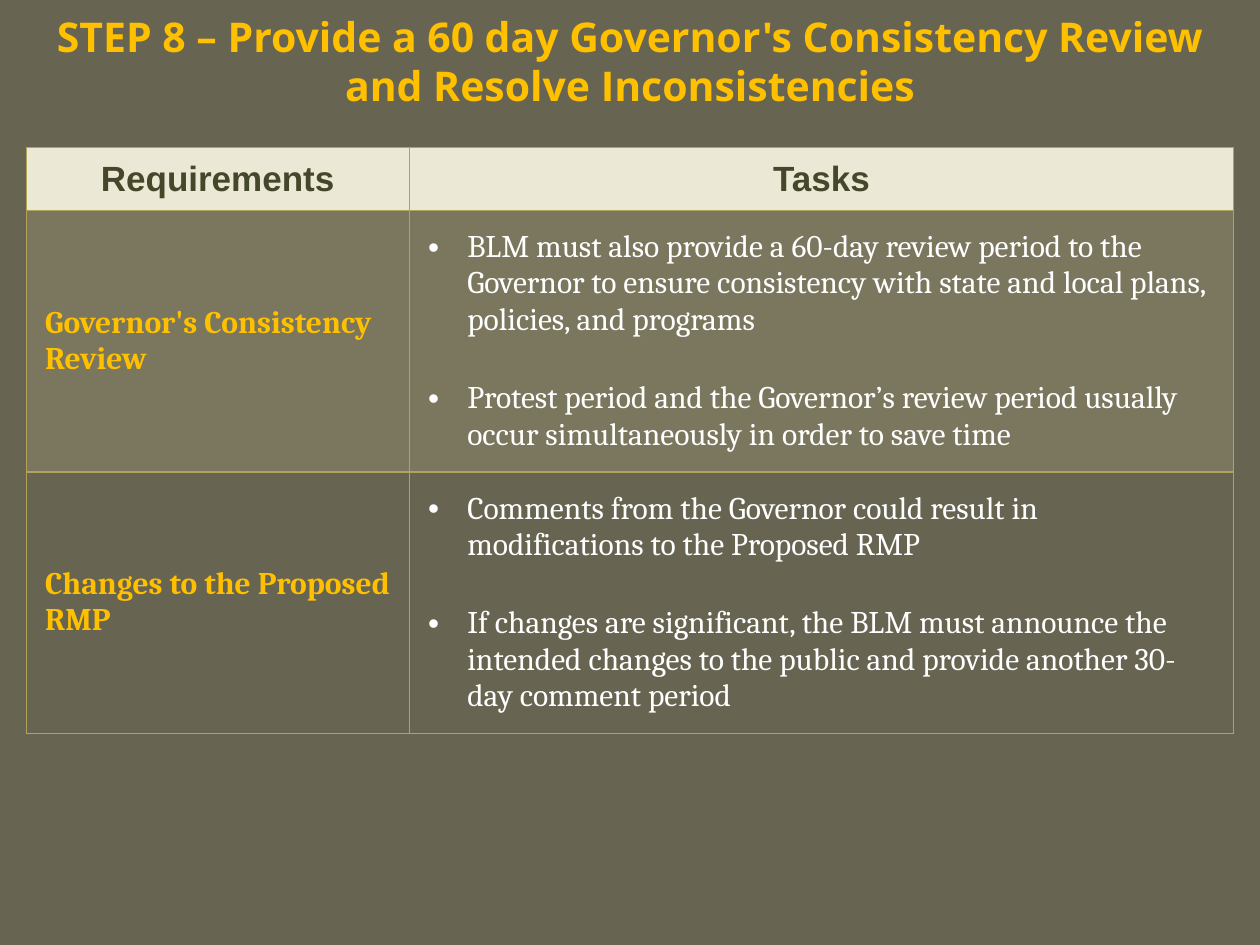
import pptx
import pptx.util
import pptx.dml.color
import pptx.enum.text
from lxml import etree
from pptx.oxml.ns import qn

Cm, Pt = pptx.util.Cm, pptx.util.Pt
ALIGN, ANCHOR = pptx.enum.text.PP_ALIGN, pptx.enum.text.MSO_ANCHOR

COLORS = {
    "background": "676451",
    "gold": "FFC000",
    "header_fill": "EBE8D5",
    "header_text": "45472B",
    "band": "CEC597",
    "border": "B1A35A",
    "white": "FFFFFF",
}
TITLE = ("STEP 8 – Provide a 60 day Governor's Consistency Review "
         "and Resolve Inconsistencies")
HEADERS = ["Requirements", "Tasks"]
ROWS = [
    ("Governor's Consistency Review", [
        "BLM must also provide a 60-day review period to the Governor to ensure "
        "consistency with state and local plans, policies, and programs",
        "Protest period and the Governor’s review period usually occur "
        "simultaneously in order to save time",
    ]),
    ("Changes to the Proposed RMP", [
        "Comments from the Governor could result in modifications to the "
        "Proposed RMP",
        "If changes are significant, the BLM must announce the intended changes "
        "to the public and provide another 30-day comment period",
    ]),
]


def rgb(name):
    return pptx.dml.color.RGBColor.from_string(COLORS[name])


def style(p, font, size, color, bold, align=ALIGN.LEFT):
    p.alignment = align
    for r in p.runs:
        r.font.name, r.font.size, r.font.bold = font, Pt(size), bold
        r.font.color.rgb = rgb(color)


def add_bullet(p, indent):
    pPr = p._p.get_or_add_pPr()
    pPr.set("marL", str(indent))
    pPr.set("indent", str(-indent))
    etree.SubElement(pPr, qn("a:buFont"), typeface="Arial")
    etree.SubElement(pPr, qn("a:buChar"), char="•")


def set_borders(cell, color, width):
    tcPr = cell._tc.get_or_add_tcPr()
    for i, side in enumerate(("lnL", "lnR", "lnT", "lnB")):
        ln = etree.Element(qn("a:" + side), w=str(Pt(width)))
        fill = etree.SubElement(ln, qn("a:solidFill"))
        etree.SubElement(fill, qn("a:srgbClr"), val=COLORS[color])
        tcPr.insert(i, ln)


def fill_cell(cell, color=None, opacity=100):
    if color is None:
        cell.fill.background()
    else:
        cell.fill.solid()
        cell.fill.fore_color.rgb = rgb(color)
        clr = cell._tc.tcPr.find(".//" + qn("a:srgbClr"))
        if opacity < 100:
            etree.SubElement(clr, qn("a:alpha"), val=str(opacity * 1000))
    set_borders(cell, "border", 1)


def write_tasks(tf, tasks):
    for i, task in enumerate(tasks):
        p = tf.add_paragraph() if i else tf.paragraphs[0]
        p.text = task
        if i:
            p.space_before = Pt(12)
        p.space_after = Pt(12)
        add_bullet(p, Cm(0.79))
        style(p, "Cambria", 18, "white", False)


def place_title(s, x, y, w, h):
    sp = s.shapes.title
    sp.left, sp.top, sp.width, sp.height = x, y, w, h
    tf = sp.text_frame
    tf.text = TITLE
    tf.word_wrap = True
    tf.auto_size = pptx.enum.text.MSO_AUTO_SIZE.NONE
    tf.vertical_anchor = ANCHOR.MIDDLE
    style(tf.paragraphs[0], "Open Sans", 23.4, "gold", True, ALIGN.CENTER)


def add_requirements_table(s, x, y, w, h):
    table = s.shapes.add_table(len(ROWS) + 1, len(HEADERS), x, y, w, h).table
    table.first_row = table.horz_banding = False
    table.columns[0].width = Cm(7.72)
    table.columns[1].width = w - Cm(7.72)
    header_h = Cm(1.27)
    table.rows[0].height = header_h

    for col, header in enumerate(HEADERS):
        cell = table.cell(0, col)
        cell.text = header
        cell.vertical_anchor = ANCHOR.MIDDLE
        fill_cell(cell, "header_fill")
        style(cell.text_frame.paragraphs[0], "Arial", 20, "header_text", True,
              ALIGN.CENTER)

    for i, (requirement, tasks) in enumerate(ROWS, start=1):
        table.rows[i].height = (h - header_h) // len(ROWS)
        name_cell, task_cell = table.cell(i, 0), table.cell(i, 1)
        for cell in (name_cell, task_cell):
            cell.vertical_anchor = ANCHOR.MIDDLE
            cell.margin_left = cell.margin_right = Cm(0.38)
            cell.margin_top = cell.margin_bottom = Cm(0.38)
            fill_cell(cell, "band" if i % 2 else None, 20)
        name_cell.text = requirement
        style(name_cell.text_frame.paragraphs[0], "Cambria", 18, "gold", True)
        write_tasks(task_cell.text_frame, tasks)


def main():
    prs = pptx.Presentation()
    prs.slide_width, prs.slide_height = Cm(25.4), Cm(19.05)
    s = prs.slides.add_slide(prs.slide_layouts.get_by_name("Title Only"))
    s.background.fill.solid()
    s.background.fill.fore_color.rgb = rgb("background")
    margin = Cm(0.53)
    content_w = prs.slide_width - 2 * margin
    place_title(s, margin, Cm(0.33), content_w, Cm(1.78))
    add_requirements_table(s, margin, Cm(2.97), content_w, Cm(11.8))
    prs.save("out.pptx")


if __name__ == "__main__":
    main()
